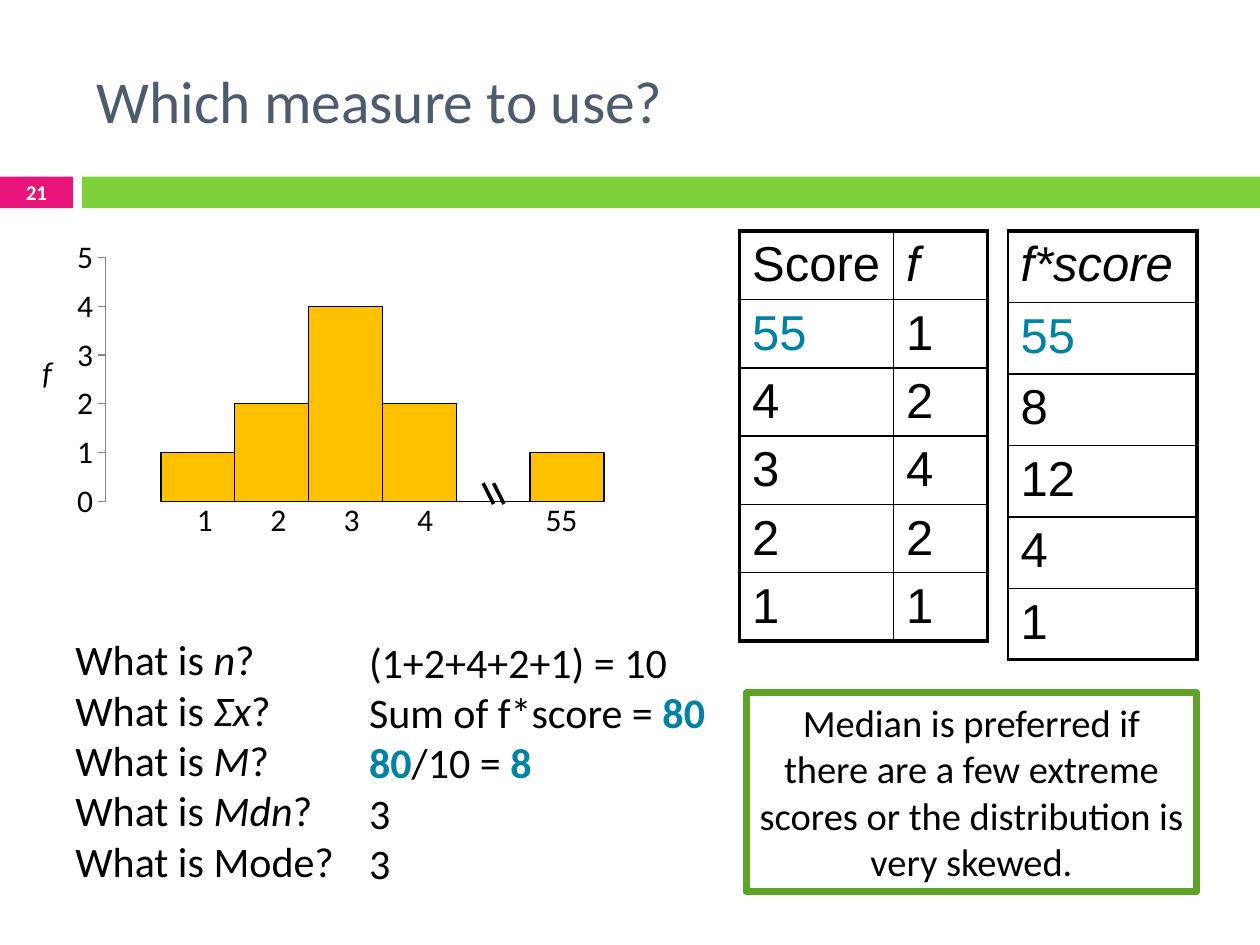
"""Build a slide on choosing a measure of central tendency."""
from lxml.etree import SubElement
from pptx import Presentation
from pptx.chart.data import CategoryChartData
from pptx.dml.color import RGBColor
from pptx.enum.chart import XL_CHART_TYPE, XL_TICK_MARK
from pptx.enum.shapes import MSO_CONNECTOR, MSO_SHAPE
from pptx.enum.text import MSO_ANCHOR, PP_ALIGN
from pptx.oxml import parse_xml
from pptx.oxml.ns import nsdecls, qn
from pptx.util import Cm, Pt

TEAL, BLACK = "0082A5", "000000"


def rgb(code):
    return RGBColor.from_string(code)


def write(sp, lines, size, color=BLACK, align=PP_ALIGN.LEFT, anchor=MSO_ANCHOR.TOP):
    tf = sp.text_frame
    tf.word_wrap = True
    tf.vertical_anchor = anchor
    for i, line in enumerate(lines):
        p = tf.add_paragraph() if i else tf.paragraphs[0]
        p.alignment = align
        p.font.size, p.font.name = Pt(size), "Calibri"
        p.font.color.rgb = rgb(color)
        for text, style in line:
            r = p.add_run()
            r.text = text
            if style == "i":
                r.font.italic = True
            elif style == "b":
                r.font.bold = True
            elif style == "teal":
                r.font.bold = True
                r.font.color.rgb = rgb(TEAL)


prs = Presentation()
prs.slide_width, prs.slide_height = Cm(25.4), Cm(19.05)
s = prs.slides.add_slide(prs.slide_layouts[6])

for x, w, color in [(0, 1.47, "EA157A"), (1.65, 23.75, "7FD13B")]:
    sp = s.shapes.add_shape(MSO_SHAPE.RECTANGLE, Cm(x), Cm(3.56), Cm(w), Cm(0.64))
    sp.shadow.inherit = False
    sp.fill.solid()
    sp.fill.fore_color.rgb = rgb(color)
    sp.line.fill.background()

sp = s.shapes.add_textbox(Cm(1.7), Cm(0.64), Cm(22.66), Cm(2.74))
write(sp, [[("Which measure to use?", "")]], 34, "4E5B6F", anchor=MSO_ANCHOR.MIDDLE)
sp = s.shapes.add_textbox(Cm(0), Cm(3.53), Cm(1.47), Cm(0.69))
write(sp, [[("21", "b")]], 12, "FFFFFF", PP_ALIGN.CENTER, MSO_ANCHOR.MIDDLE)

scores = [["Score", "f"], ["55", "1"], ["4", "2"], ["3", "4"], ["2", "2"], ["1", "1"]]
products = [["f*score"], ["55"], ["8"], ["12"], ["4"], ["1"]]
for x, widths, row_h, left_w, rows in [
    (14.91, [3.1, 1.9], 1.35, 2.25, scores),
    (20.32, [3.81], 1.44, 1, products),
]:
    frame = s.shapes.add_table(len(rows), len(widths), Cm(x), Cm(4.66),
                               Cm(sum(widths)), Cm(row_h * len(rows)))
    table = frame.table
    table.first_row = table.horz_banding = False
    for col, w in zip(table.columns, widths):
        col.width = Cm(w)
    for i, row in enumerate(rows):
        table.rows[i].height = Cm(row_h)
        for j, text in enumerate(row):
            cell = table.cell(i, j)
            cell.margin_top, cell.margin_bottom = Cm(0.13), Cm(0.06)
            p = cell.text_frame.paragraphs[0]
            p.text = text
            p.font.size, p.font.name = Pt(28), "Arial"
            p.font.italic = text.startswith("f")
            p.font.color.rgb = rgb(TEAL if text == "55" else BLACK)
            edges = {
                "a:lnL": 1 if j else left_w,
                "a:lnR": 2.25 if j == len(widths) - 1 else 1,
                "a:lnT": 1 if i else 2.25,
                "a:lnB": 2.25 if i == len(rows) - 1 else 1,
            }
            tc_pr = cell._tc.get_or_add_tcPr()
            for tag, width in edges.items():
                ln = SubElement(tc_pr, qn(tag), w=str(Pt(width)))
                fill = SubElement(ln, qn("a:solidFill"))
                SubElement(fill, qn("a:srgbClr"), val=BLACK)
            cell.fill.background()

questions = [[("What is ", ""), (name, "i"), ("?", "")] for name in ["n", "Σx", "M", "Mdn"]]
questions.append([("What is Mode?", "")])
answers = [
    [("(1+2+4+2+1) = 10", "")],
    [("Sum of f*score = ", ""), ("80", "teal")],
    [("80", "teal"), ("/10 = ", ""), ("8", "teal")],
    [("3", "")],
    [("3", "")],
]
for x, y, w, lines in [(1.27, 12.65, 6.15, questions), (7.19, 12.7, 7.62, answers)]:
    sp = s.shapes.add_textbox(Cm(x), Cm(y), Cm(w), Cm(5.38))
    write(sp, lines, 24)

sp = s.shapes.add_shape(MSO_SHAPE.RECTANGLE, Cm(15.04), Cm(13.97), Cm(9.09), Cm(4.01))
sp.shadow.inherit = False
sp.fill.background()
sp.line.color.rgb = rgb("5FA326")
sp.line.width = Pt(4)
advice = "Median is preferred if there are a few extreme scores or the distribution is very skewed."
write(sp, [[(advice, "")]], 22, align=PP_ALIGN.CENTER)

data = CategoryChartData()
data.categories = ["1"]
for i, count in enumerate([1, 2, 4, 2, 0, 1], 1):
    data.add_series(f"Series {i}", [count])
chart = s.shapes.add_chart(XL_CHART_TYPE.COLUMN_CLUSTERED, Cm(1.27), Cm(4.66),
                           Cm(12.27), Cm(5.92), data).chart
chart.has_legend = chart.has_title = False
chart.font.size, chart.font.name = Pt(18), "Calibri"
chart.font.color.rgb = rgb(BLACK)
chart.category_axis.visible = False
axis = chart.value_axis
axis.minimum_scale, axis.maximum_scale, axis.major_unit = 0, 5, 1
axis.has_major_gridlines = False
axis.major_tick_mark = XL_TICK_MARK.OUTSIDE
axis.format.line.color.rgb = rgb("868686")
plot = chart.plots[0]
plot.gap_width, plot.overlap, plot.vary_by_categories = 150, 0, False
for series in plot.series:
    series.format.fill.solid()
    series.format.fill.fore_color.rgb = rgb("FFC000")
    series.format.line.color.rgb = rgb(BLACK)
    series.format.line.width = Pt(0.75)
area = chart._chartSpace.chart.plotArea
for old in area.findall(qn("c:layout")):
    area.remove(old)
area.insert(0, parse_xml(
    f'<c:layout {nsdecls("c")}><c:manualLayout><c:layoutTarget val="inner"/>'
    '<c:xMode val="edge"/><c:yMode val="edge"/><c:x val="0.07"/><c:y val="0.09"/>'
    '<c:w val="0.91"/><c:h val="0.83"/></c:manualLayout></c:layout>'))

labels = [(3.18 + 1.48 * i, 9.95, str(i + 1), "") for i in range(4)]
labels += [(10.37, 9.95, "55", ""), (0, 6.99, "f", "i")]
for x, y, text, style in labels:
    sp = s.shapes.add_textbox(Cm(x), Cm(y), Cm(1.9), Cm(1.06))
    write(sp, [[(text, style)]], 18, align=PP_ALIGN.CENTER)

for x in [9.74, 9.95]:
    line = s.shapes.add_connector(MSO_CONNECTOR.STRAIGHT, Cm(x), Cm(9.74), Cm(x + 0.21), Cm(10.16))
    line.line.color.rgb = rgb(BLACK)
    line.line.width = Pt(2)
    SubElement(line._element.spPr, qn("a:effectLst"))

prs.save("out.pptx")
